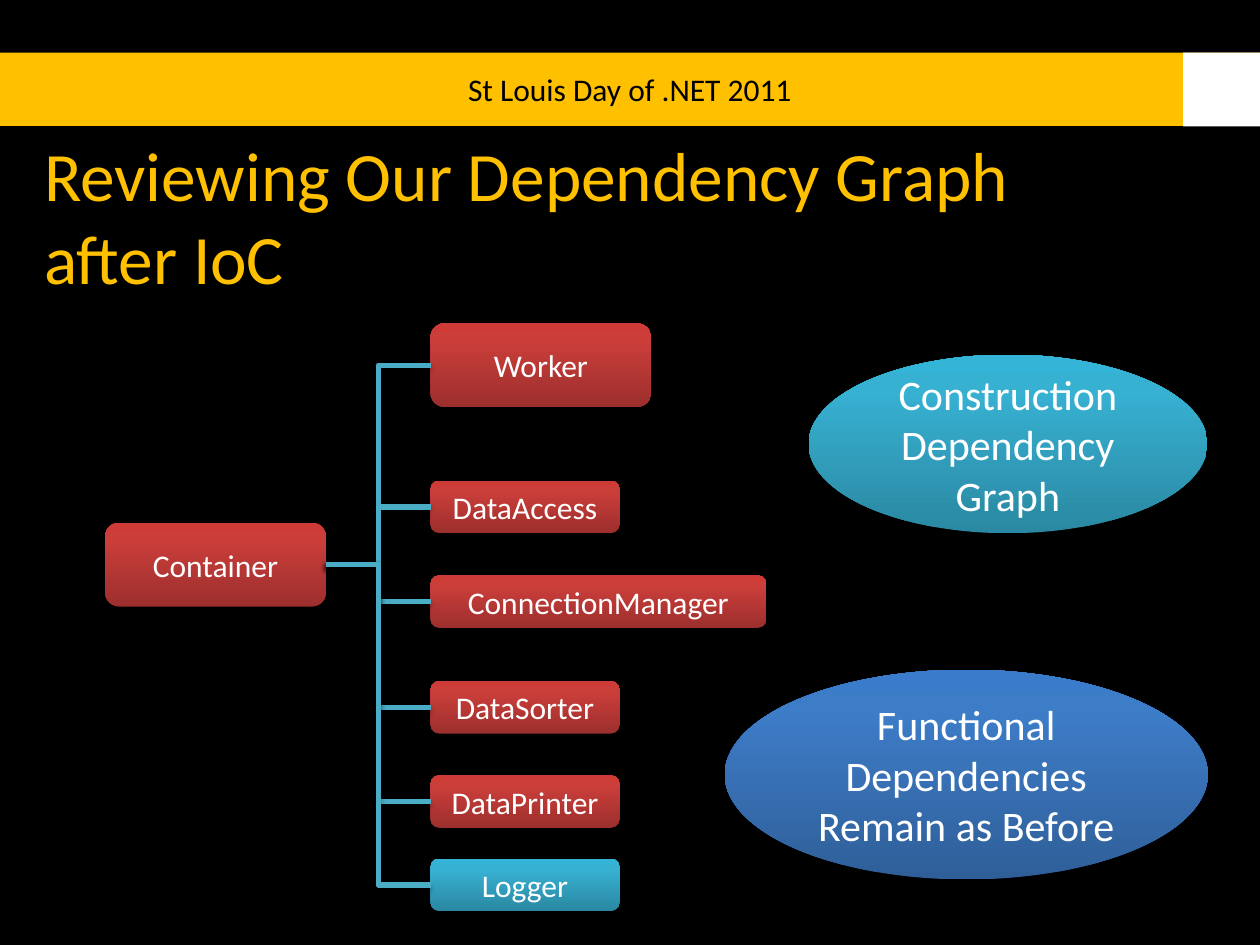
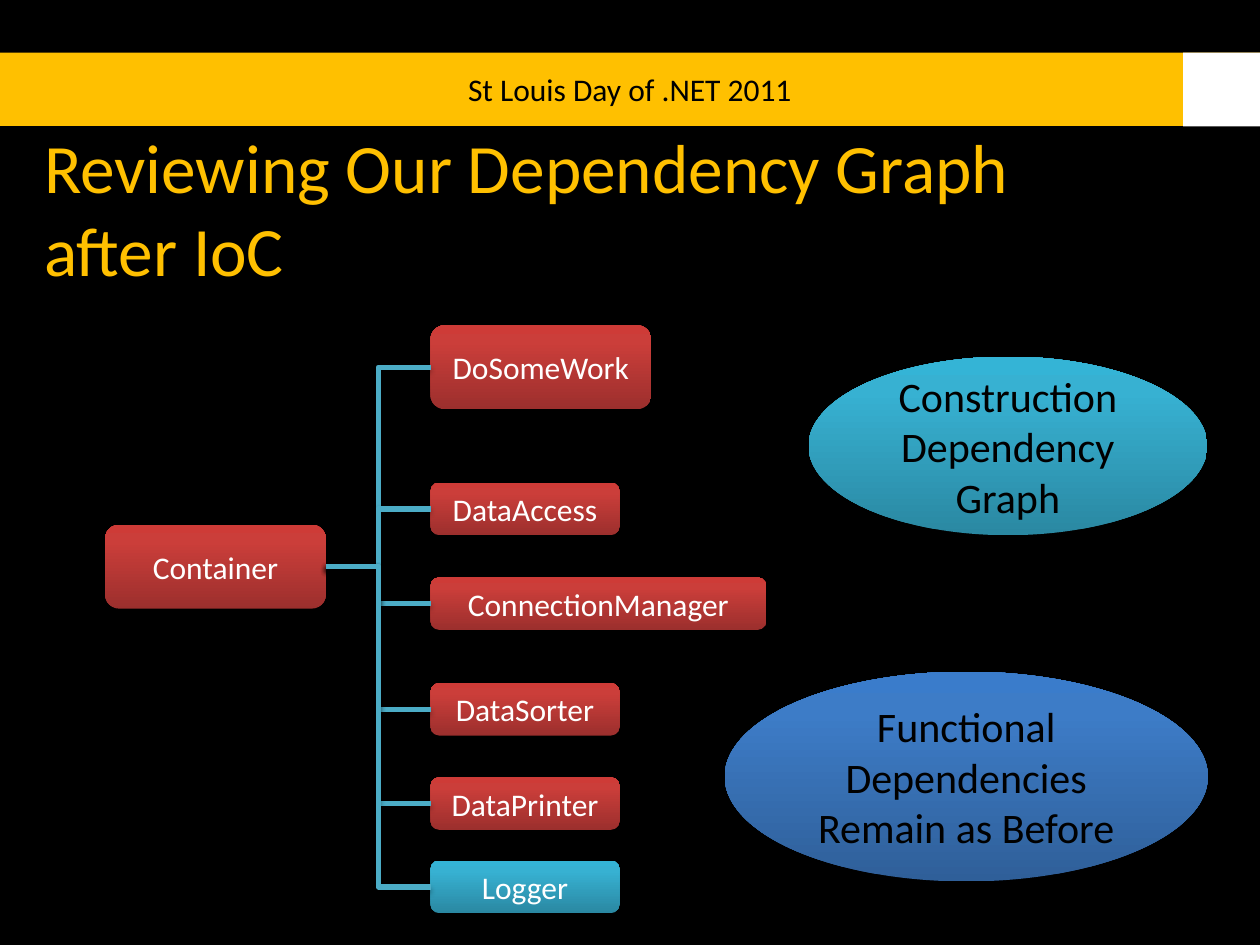
from lxml import etree
from pptx import Presentation
from pptx.dml.color import RGBColor
from pptx.enum.shapes import MSO_CONNECTOR, MSO_SHAPE
from pptx.enum.text import MSO_ANCHOR, PP_ALIGN
from pptx.oxml import parse_xml
from pptx.oxml.ns import nsdecls, qn
from pptx.util import Cm, Pt

RECT, ROUNDED, OVAL = MSO_SHAPE.RECTANGLE, MSO_SHAPE.ROUNDED_RECTANGLE, MSO_SHAPE.OVAL
ELBOW = MSO_CONNECTOR.ELBOW
CENTER, LEFT = PP_ALIGN.CENTER, PP_ALIGN.LEFT
MIDDLE, TOP = MSO_ANCHOR.MIDDLE, MSO_ANCHOR.TOP
LEFT_SITE, RIGHT_SITE = 1, 3

FONT = "Calibri"
COLORS = {"black": "000000", "white": "FFFFFF", "gold": "FFC000", "line": "4BACC6"}
# Gradient colours at 0, 80 and 100 percent, from bottom to top
GRADIENTS = {
    "red": ("9C2F2D", "CB3E3A", "CE3B37"),
    "aqua": ("2A88A2", "37B1D2", "34B4D6"),
    "blue": ("2F5F99", "3D7CC7", "3A7CCB"),
}
STOPS = (0, 80000, 100000)

EVENT = "St Louis Day of .NET 2011"
TITLE = "Reviewing Our Dependency Graph after IoC"

# Lengths in cm; each slide moves the whole diagram down by its "shift"
SLIDES = [
    {"root_class": "Worker", "title_top": 2.54, "title_width": 22.43,
     "shift": 0, "note_color": "white"},
    {"root_class": "DoSomeWork", "title_top": 2.38, "title_width": 22.23,
     "shift": 0.04, "note_color": "black"},
]
LARGE, SMALL, WIDE = (4.45, 1.69), (3.81, 1.06), (6.77, 1.06)
CONTAINER_AT = (2.12, 10.54)
DEPENDENCY_LEFT = 8.68
DEPENDENCIES = [  # name, top, size, gradient
    (None, 6.52, LARGE, "red"),  # named by the slide's root_class
    ("DataAccess", 9.69, SMALL, "red"),
    ("ConnectionManager", 11.6, WIDE, "red"),
    ("DataSorter", 13.73, SMALL, "red"),
    ("DataPrinter", 15.63, SMALL, "red"),
    ("Logger", 17.31, SMALL, "aqua"),
]
NOTES = [  # text, position, size, gradient
    ("Construction Dependency Graph", (16.3, 7.15), (8.04, 3.6), "aqua"),
    ("Functional Dependencies Remain as Before", (14.61, 13.5), (9.74, 4.23), "blue"),
]


def rgb(name):
    return RGBColor.from_string(COLORS[name])


def write(sp, text, size, color, align=CENTER, anchor=MIDDLE):
    tf = sp.text_frame
    tf.word_wrap = True
    tf.vertical_anchor = anchor
    p = tf.paragraphs[0]
    p.alignment = align
    r = p.add_run()
    r.text = text
    r.font.name, r.font.size = FONT, Pt(size)
    r.font.color.rgb = rgb(color)


def add_shadow(spPr):
    """Put a soft downward shadow in the effect list, making the list if needed."""
    effects = spPr.find(qn("a:effectLst"))
    if effects is None:
        effects = etree.SubElement(spPr, qn("a:effectLst"))
    effects.append(parse_xml(
        f'<a:outerShdw {nsdecls("a")} blurRad="40000" dist="23000" dir="5400000" '
        'rotWithShape="0"><a:srgbClr val="000000"><a:alpha val="35000"/>'
        '</a:srgbClr></a:outerShdw>'))


def add_plain(slide, kind, at, size):
    sp = slide.shapes.add_shape(kind, *map(Cm, at + size))
    sp.shadow.inherit = False
    sp.line.fill.background()
    return sp


def add_node(slide, kind, text, at, size, gradient, text_size=18, color="white"):
    sp = add_plain(slide, kind, at, size)
    stops = "".join(f'<a:gs pos="{pos}"><a:srgbClr val="{c}"/></a:gs>'
                    for pos, c in zip(STOPS, GRADIENTS[gradient]))
    spPr = sp._element.spPr
    spPr.find(qn("a:prstGeom")).addnext(parse_xml(
        f'<a:gradFill {nsdecls("a")} rotWithShape="1"><a:gsLst>{stops}</a:gsLst>'
        '<a:lin ang="16200000" scaled="0"/></a:gradFill>'))
    add_shadow(spPr)
    write(sp, text, text_size, color)
    return sp


def connect(slide, source, target):
    line = slide.shapes.add_connector(ELBOW, 0, 0, 0, 0)
    line.begin_connect(source, RIGHT_SITE)
    line.end_connect(target, LEFT_SITE)
    line.line.color.rgb = rgb("line")
    line.line.width = Pt(3)
    add_shadow(line._element.spPr)


def add_frame(slide, title_top, title_width):
    """Background, event band, page-number corner and title."""
    slide.background.fill.solid()
    slide.background.fill.fore_color.rgb = rgb("black")
    band = add_plain(slide, RECT, (0, 1.06), (25.4, 1.48))
    corner = add_plain(slide, RECT, (23.85, 1.06), (1.55, 1.49))
    for sp, color in ((band, "gold"), (corner, "white")):
        sp.fill.solid()
        sp.fill.fore_color.rgb = rgb(color)
    write(band, EVENT, 18, "black")
    title = slide.shapes.add_textbox(Cm(0.64), Cm(title_top), Cm(title_width), Cm(1.48))
    write(title, TITLE, 39.6, "gold", LEFT, TOP)


def add_diagram(slide, root_class, shift, note_color):
    left, top = CONTAINER_AT
    container = add_node(slide, ROUNDED, "Container", (left, top + shift), LARGE, "red")
    for name, top, size, gradient in DEPENDENCIES:
        node = add_node(slide, ROUNDED, name or root_class,
                        (DEPENDENCY_LEFT, top + shift), size, gradient)
        connect(slide, container, node)
    for text, (left, top), size, gradient in NOTES:
        add_node(slide, OVAL, text, (left, top + shift), size, gradient, 24, note_color)


def main():
    prs = Presentation()
    prs.slide_width, prs.slide_height = Cm(25.4), Cm(19.05)
    blank = prs.slide_layouts[6]
    for s in SLIDES:
        slide = prs.slides.add_slide(blank)
        add_frame(slide, s["title_top"], s["title_width"])
        add_diagram(slide, s["root_class"], s["shift"], s["note_color"])
    prs.save("out.pptx")


if __name__ == "__main__":
    main()
